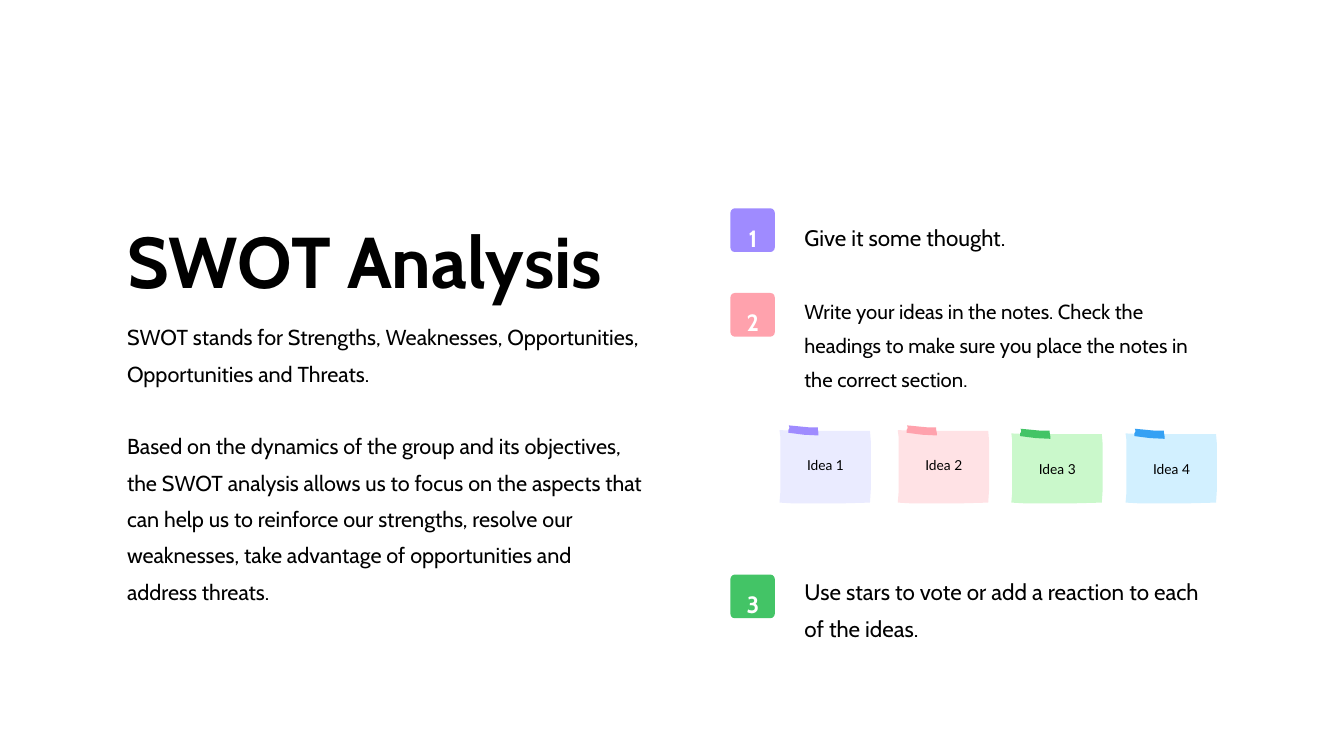
from pptx import Presentation
from pptx.dml.color import RGBColor
from pptx.enum.shapes import MSO_SHAPE
from pptx.enum.text import PP_ALIGN
from pptx.util import Inches, Pt

ROUND = MSO_SHAPE.ROUNDED_RECTANGLE
LEFT, CENTER = PP_ALIGN.LEFT, PP_ALIGN.CENTER
BLACK, WHITE = "000000", "FFFFFF"

TITLE = "SWOT Analysis"
BODY = [
    "SWOT stands for Strengths, Weaknesses, Opportunities, Opportunities and Threats.",
    "Based on the dynamics of the group and its objectives, the SWOT analysis allows us "
    "to focus on the aspects that can help us to reinforce our strengths, resolve our "
    "weaknesses, take advantage of opportunities and address threats.",
]
STEPS = [
    ("1", 3.1, "9F8BFF", "Give it some thought.", 3.17, 0.4, 24),
    ("2", 4.36, "FFA2AD", "Write your ideas in the notes. Check the headings to make sure "
     "you place the notes in the correct section.", 4.3, 1.39, 21.8),
    ("3", 8.55, "43C466", "Use stars to vote or add a reaction to each of the ideas.",
     8.44, 0.97, 24),
]
NOTES = [
    ("Idea 1", 11.6, 6.4, "EAEBFF", "9F8BFF"),
    ("Idea 2", 13.36, 6.4, "FFE2E5", "FFA2AD"),
    ("Idea 3", 15.05, 6.45, "CAF8CB", "43C466"),
    ("Idea 4", 16.75, 6.45, "D2F0FF", "35A1F4"),
]
BASE = 7.49
SHEET = [(0, 0), (0.17, 0.01), (0.6, 0.01), (0.99, 0.01), (1, 0.16), (1, 0.8),
         (0.99, 0.99), (0.69, 1), (0.14, 1), (0, 0.99), (0.01, 0.84), (0.01, 0.1)]
TAPE = [(0.02, 0), (0.7, 0.2), (0.98, 0.2), (0.98, 0.4), (1, 0.75), (1, 1),
        (0.52, 0.93), (0, 0.73), (0, 0.47), (0.04, 0.27)]


def color(code):
    return RGBColor.from_string(code)


def paint(shape, code):
    shape.shadow.inherit = False
    shape.fill.solid()
    shape.fill.fore_color.rgb = color(code)
    shape.line.fill.background()


def write(box, lines, size, font="Cabin", ink=BLACK, bold=False, align=LEFT,
          pitch=1.4, gap=0):
    frame = slide.shapes.add_textbox(*map(Inches, box)).text_frame
    frame.word_wrap = True
    frame.margin_left = frame.margin_right = 0
    frame.margin_top = frame.margin_bottom = 0
    for i, line in enumerate(lines):
        para = frame.add_paragraph() if i else frame.paragraphs[0]
        para.alignment = align
        para.line_spacing = pitch
        if i:
            para.space_before = Pt(gap)
        run = para.add_run()
        run.text = line
        run.font.name = font
        run.font.size = Pt(size)
        run.font.bold = bold
        run.font.color.rgb = color(ink)


def outline(points, left, top, wide, high, code):
    spots = [(Inches(left + x * wide), Inches(top + y * high)) for x, y in points]
    pen = slide.shapes.build_freeform(*spots[0])
    pen.add_line_segments(spots[1:], close=True)
    paint(pen.convert_to_shape(), code)


deck = Presentation()
deck.slide_width, deck.slide_height = Inches(20), Inches(11.25)
slide = deck.slides.add_slide(deck.slide_layouts[6])

write((1.89, 3.1, 7.71, 1.3), [TITLE], 77, bold=True, pitch=1.1)
write((1.89, 4.67, 7.71, 4.23), BODY, 23.2, gap=39)

for mark, top, tint, text, y, high, size in STEPS:
    badge = slide.shapes.add_shape(ROUND, *map(Inches, (10.87, top, 0.66, 0.65)))
    badge.adjustments[0] = 0.1
    paint(badge, tint)
    write((11.04, top + 0.06, 0.33, 0.47), [mark], 25.2, ink=WHITE, bold=True,
          align=CENTER)
    write((11.97, y, 6.13, high), [text], size)

for name, left, top, tint, tape in NOTES:
    outline(SHEET, left, top, 1.36, BASE - top, tint)
    outline(TAPE, left + 0.13, top - 0.07, 0.45, 0.15, tape)
    write((left + 0.17, top + 0.45, 1.03, 0.18), [name], 14.7, font="Lato",
          align=CENTER, pitch=0.8)

deck.save("out.pptx")
